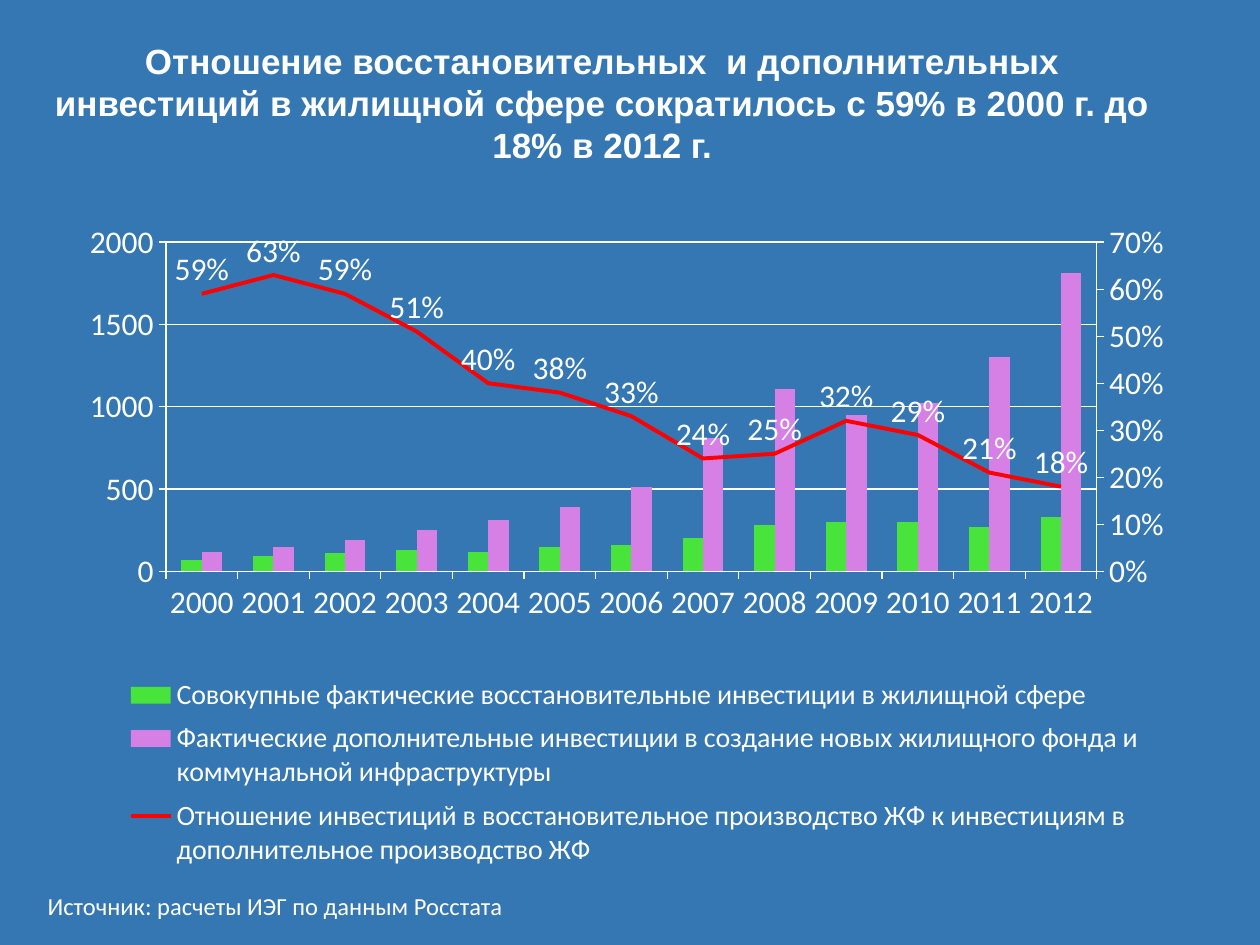
from pptx import Presentation
from pptx.chart.data import CategoryChartData as Data
from pptx.dml.color import RGBColor
from pptx.enum.chart import XL_CHART_TYPE as Kind, XL_LABEL_POSITION as Spot
from pptx.enum.chart import XL_LEGEND_POSITION as Side, XL_MARKER_STYLE as Mark
from pptx.enum.chart import XL_TICK_MARK as Tick
from pptx.enum.text import MSO_ANCHOR as Anchor, PP_ALIGN as Align
from pptx.oxml import parse_xml
from pptx.oxml.ns import nsdecls, qn
from pptx.util import Cm, Pt

WHITE = "FFFFFF"


def style(font, size, name="Calibri", color=WHITE, bold=False):
    font.size, font.name, font.bold = Pt(size), name, bold
    font.color.rgb = RGBColor.from_string(color)


def place(parent, index, x, y, w, h, inner=""):
    """Give a chart part a fixed layout, in fractions of the chart."""
    for old in parent.findall(qn("c:layout")):
        parent.remove(old)
    parent.insert(index, parse_xml(
        f'<c:layout {nsdecls("c")}><c:manualLayout>{inner}'
        '<c:xMode val="edge"/><c:yMode val="edge"/>'
        f'<c:x val="{x}"/><c:y val="{y}"/><c:w val="{w}"/><c:h val="{h}"/>'
        '</c:manualLayout></c:layout>'))


prs = Presentation()
prs.slide_width, prs.slide_height = Cm(25.4), Cm(19.05)
slide = prs.slides.add_slide(prs.slide_layouts[5])
back = slide.background.fill
back.solid()
back.fore_color.rgb = RGBColor.from_string("3477B2")

# Title
title = slide.shapes.title
title.left, title.top, title.width, title.height = Cm(0.71), Cm(0.48), Cm(22.86), Cm(3.18)
frame = title.text_frame
frame.text = ("Отношение восстановительных  и дополнительных инвестиций в жилищной "
              "сфере сократилось с 59% в 2000 г. до 18% в 2012 г.")
frame.word_wrap = True
frame.vertical_anchor = Anchor.MIDDLE
frame.paragraphs[0].alignment = Align.CENTER
style(frame.paragraphs[0].runs[0].font, 20, "Arial", bold=True)

# Chart: columns first, then the ratio becomes a line on a second axis
data = Data(number_format="0")
data.categories = [str(year) for year in range(2000, 2013)]
data.add_series("Совокупные фактические восстановительные инвестиции в жилищной сфере",
                [70, 90, 110, 130, 120, 150, 160, 200, 280, 300, 300, 270, 330])
data.add_series("Фактические дополнительные инвестиции в создание новых жилищного фонда "
                "и коммунальной инфраструктуры",
                [120, 150, 190, 250, 310, 390, 510, 810, 1110, 950, 1020, 1300, 1810])
data.add_series("Отношение инвестиций в восстановительное производство ЖФ к инвестициям "
                "в дополнительное производство ЖФ",
                [0.59, 0.63, 0.59, 0.51, 0.4, 0.38, 0.33, 0.24, 0.25, 0.32, 0.29, 0.21, 0.18],
                number_format="0%")
chart = slide.shapes.add_chart(Kind.COLUMN_CLUSTERED, Cm(1.27), Cm(4.45),
                               Cm(22.83), Cm(13.49), data).chart
style(chart.font, 18)
chart.has_title = False

bars = chart.plots[0]
bars.gap_width, bars.overlap = 150, 0
bars.vary_by_categories = False
for ser, color in zip(bars.series, ("48E43C", "D67FE5")):
    ser.format.fill.solid()
    ser.format.fill.fore_color.rgb = RGBColor.from_string(color)

cats, vals = chart.category_axis, chart.value_axis
vals.minimum_scale, vals.maximum_scale, vals.major_unit = 0, 2000, 500
vals.tick_labels.number_format = "0"
vals.tick_labels.number_format_is_linked = False
vals.has_major_gridlines = True
cats.major_tick_mark = vals.major_tick_mark = Tick.OUTSIDE
for part in (cats, vals, vals.major_gridlines):
    part.format.line.width = Pt(0.75)
    part.format.line.color.rgb = RGBColor.from_string(WHITE)

ratio = bars.series[2]._element
for flag in ratio.findall(qn("c:invertIfNegative")):
    ratio.remove(flag)
lines = parse_xml(
    f'<c:lineChart {nsdecls("c")}><c:grouping val="standard"/><c:varyColors val="0"/>'
    '<c:marker val="1"/><c:axId val="5001"/><c:axId val="5002"/></c:lineChart>')
lines.insert(2, ratio)
area = chart._chartSpace.find(qn("c:chart")).find(qn("c:plotArea"))
area.find(qn("c:barChart")).addnext(lines)
hidden = parse_xml(
    f'<c:catAx {nsdecls("c")}><c:axId val="5001"/>'
    '<c:scaling><c:orientation val="minMax"/></c:scaling><c:delete val="1"/>'
    '<c:axPos val="b"/><c:crossAx val="5002"/><c:crosses val="autoZero"/></c:catAx>')
right = parse_xml(
    f'<c:valAx {nsdecls("c", "a")}><c:axId val="5002"/>'
    '<c:scaling><c:orientation val="minMax"/><c:max val="0.7"/><c:min val="0"/></c:scaling>'
    '<c:delete val="0"/><c:axPos val="r"/><c:numFmt formatCode="0%" sourceLinked="0"/>'
    '<c:majorTickMark val="out"/><c:minorTickMark val="none"/><c:tickLblPos val="nextTo"/>'
    f'<c:spPr><a:ln w="9525"><a:solidFill><a:srgbClr val="{WHITE}"/></a:solidFill></a:ln></c:spPr>'
    '<c:crossAx val="5001"/><c:crosses val="max"/><c:crossBetween val="between"/>'
    '<c:majorUnit val="0.1"/></c:valAx>')
area.find(qn("c:valAx")).addnext(hidden)
hidden.addnext(right)

line = chart.plots[1].series[0]
line.smooth = False
line.marker.style = Mark.NONE
line.format.line.width = Pt(2.25)
line.format.line.color.rgb = RGBColor.from_string("FF0000")
tags = line.data_labels
tags.show_value = True
tags.position = Spot.ABOVE
tags.number_format, tags.number_format_is_linked = "0%", False
style(tags.font, 18)

chart.has_legend = True
legend = chart.legend
legend.position = Side.BOTTOM
legend.include_in_layout = False
style(legend.font, 16)
place(area, 0, 0.091, 0.032, 0.822, 0.492, '<c:layoutTarget val="inner"/>')
place(legend._element, 1, 0.05, 0.67, 0.91, 0.31)

# Source note
note = slide.shapes.add_textbox(Cm(0.71), Cm(17.83), Cm(18.59), Cm(0.86)).text_frame
note.word_wrap = True
note.text = "Источник: расчеты ИЭГ по данным Росстата"
style(note.paragraphs[0].runs[0].font, 14)

prs.save("out.pptx")
